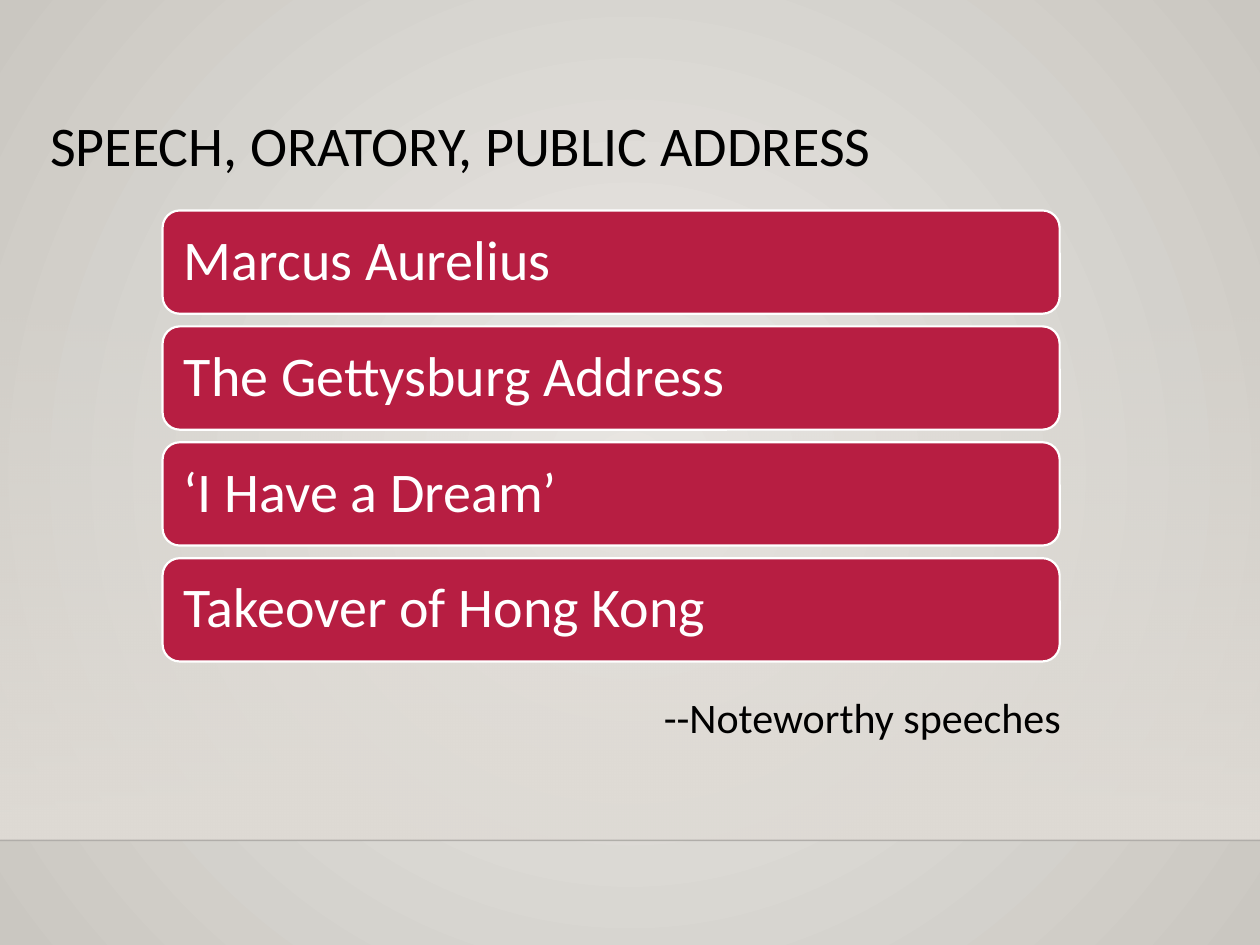
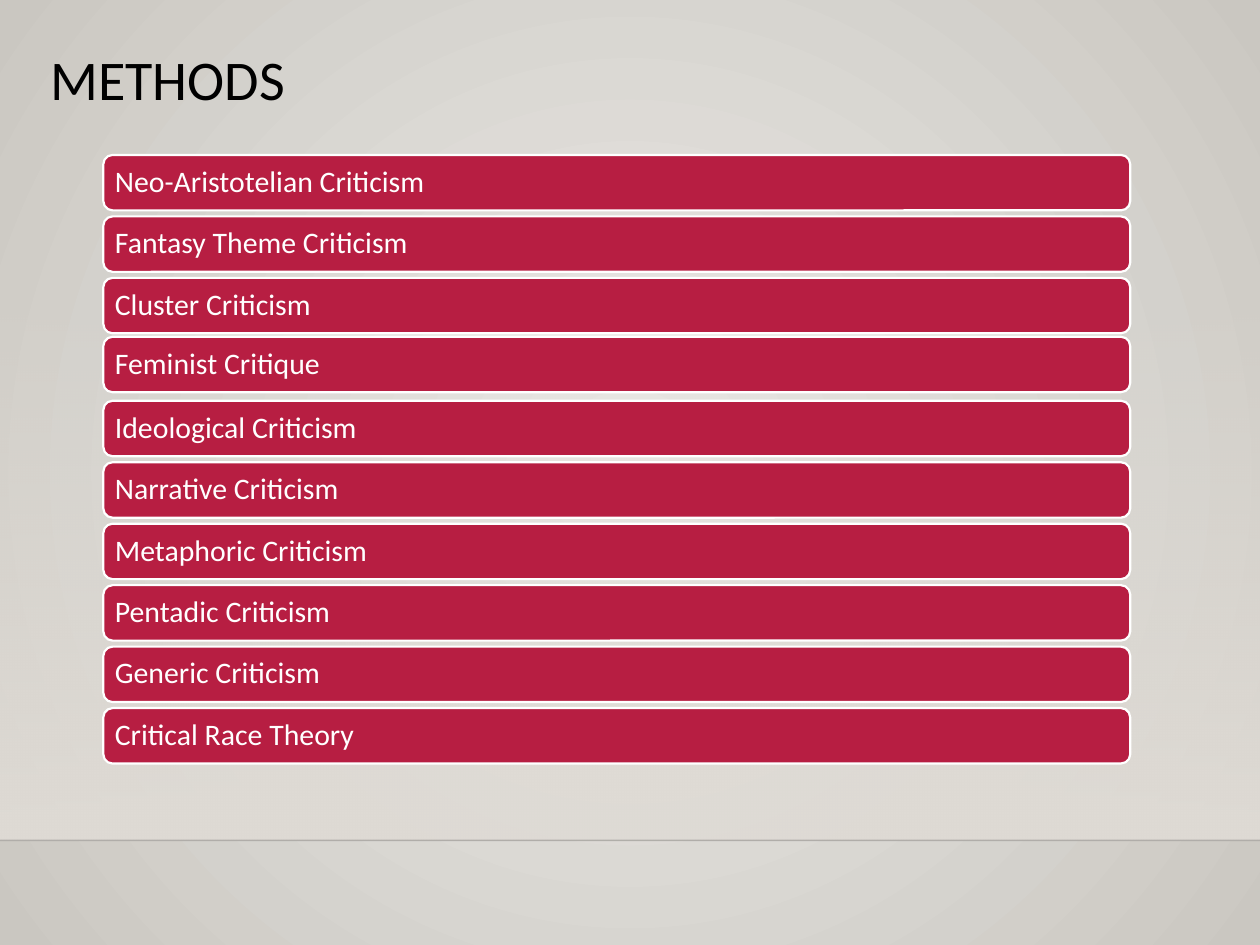
from dataclasses import dataclass

from lxml import etree
from pptx import Presentation
from pptx.dml.color import RGBColor
from pptx.enum.shapes import MSO_CONNECTOR, MSO_SHAPE
from pptx.enum.text import MSO_ANCHOR, PP_ALIGN
from pptx.oxml.ns import qn
from pptx.util import Inches, Pt

ROUNDED = MSO_SHAPE.ROUNDED_RECTANGLE
RECTANGLE = MSO_SHAPE.RECTANGLE
STRAIGHT = MSO_CONNECTOR.STRAIGHT
TOP, MIDDLE, BOTTOM = MSO_ANCHOR.TOP, MSO_ANCHOR.MIDDLE, MSO_ANCHOR.BOTTOM
LEFT = PP_ALIGN.LEFT
BLANK_LAYOUT = 6
WIDTH, HEIGHT = 10, 7.5
FLOOR = 6.67


@dataclass(frozen=True)
class Theme:
    font: str = "Calibri"
    ink: str = "000000"
    paper: str = "FFFFFF"
    bar: str = "B71E42"
    glow: str = "ECEAE7"
    edge: str = "CAC7C1"
    wall: str = "DFDBD5"
    floor_line: str = "000001"
    title_size: float = 32
    large_size: float = 32
    caption_size: float = 24
    small_size: float = 17


def rgb(value):
    return RGBColor.from_string(value)


def set_alpha(color_element, percent):
    etree.SubElement(color_element, qn("a:alpha"), val=str(percent * 1000))


def set_gradient(fill, first, last):
    fill.gradient()
    for stop, color, position in zip(fill.gradient_stops, (first, last), (0, 1)):
        stop.color.rgb = rgb(color)
        stop.position = position


def write(shape, text, *, font, size, color, anchor=TOP, spacing=0.9, inset=None):
    frame = shape.text_frame
    frame.word_wrap = True
    frame.vertical_anchor = anchor
    if inset is not None:
        frame.margin_left = frame.margin_right = Inches(inset)
        frame.margin_top = frame.margin_bottom = Inches(inset)
    para = frame.paragraphs[0]
    para.alignment = LEFT
    para.line_spacing = spacing
    span = para.add_run()
    span.text = text
    span.font.name = font
    span.font.size = Pt(size)
    span.font.color.rgb = rgb(color)


class DeckBuilder:
    def __init__(self, theme):
        self.theme = theme
        self.deck = Presentation()
        self.deck.slide_width = Inches(WIDTH)
        self.deck.slide_height = Inches(HEIGHT)
        self.page = None

    def new_page(self, title, title_top):
        self.page = self.deck.slides.add_slide(self.deck.slide_layouts[BLANK_LAYOUT])
        self.background()
        self.wall()
        self.floor_line()
        self.text(title, 0.3, title_top, 8.37, 1.25,
                  size=self.theme.title_size, anchor=BOTTOM)

    def background(self):
        set_gradient(self.page.background.fill, self.theme.glow, self.theme.edge)
        gradient = self.page.element.find(".//" + qn("a:gradFill"))
        gradient.remove(gradient.find(qn("a:lin")))
        circle = etree.SubElement(gradient, qn("a:path"), path="circle")
        etree.SubElement(circle, qn("a:fillToRect"),
                         l="50000", t="50000", r="50000", b="50000")

    def wall(self):
        wall = self.shape(RECTANGLE, 0, 2.2, WIDTH, FLOOR - 2.2)
        set_gradient(wall.fill, self.theme.wall, self.theme.wall)
        wall.fill.gradient_angle = 270
        set_alpha(wall.element.find(".//" + qn("a:srgbClr")), 0)
        wall.line.fill.background()

    def floor_line(self):
        line = self.page.shapes.add_connector(
            STRAIGHT, Inches(0), Inches(FLOOR), Inches(WIDTH), Inches(FLOOR))
        line.line.width = Pt(1)
        line.line.color.rgb = rgb(self.theme.floor_line)
        set_alpha(line.element.find(".//" + qn("a:srgbClr")), 20)
        etree.SubElement(line.element.spPr, qn("a:effectLst"))

    def shape(self, kind, left, top, width, height):
        shape = self.page.shapes.add_shape(
            kind, Inches(left), Inches(top), Inches(width), Inches(height))
        shape.shadow.inherit = False
        return shape

    def text(self, text, left, top, width, height, **style):
        box = self.page.shapes.add_textbox(
            Inches(left), Inches(top), Inches(width), Inches(height))
        write(box, text, font=self.theme.font, color=self.theme.ink, **style)

    def bar(self, text, left, top, width, height, *, size, inset):
        bar = self.shape(ROUNDED, left, top, width, height)
        bar.fill.solid()
        bar.fill.fore_color.rgb = rgb(self.theme.bar)
        bar.line.color.rgb = rgb(self.theme.paper)
        bar.line.width = Pt(1.25)
        write(bar, text, font=self.theme.font, size=size, color=self.theme.paper,
              anchor=MIDDLE, inset=inset)

    def bar_list(self, labels, left, first_top, last_top, width, height, *,
                 raised=None, **style):
        """Stack bars evenly; raised maps a label to its upward offset."""
        pitch = (last_top - first_top) / (len(labels) - 1)
        for index, label in enumerate(labels):
            top = first_top + index * pitch - (raised or {}).get(label, 0)
            self.bar(label, left, top, width, height, **style)


def main():
    theme = Theme()
    builder = DeckBuilder(theme)

    # Noteworthy speeches
    builder.new_page("SPEECH, ORATORY, PUBLIC ADDRESS", 0.22)
    speeches = ["Marcus Aurelius", "The Gettysburg Address",
                "‘I Have a Dream’", "Takeover of Hong Kong"]
    builder.bar_list(speeches, 1.29, 1.67, 4.43, 7.12, 0.82,
                     size=theme.large_size, inset=0.13)
    builder.text("--Noteworthy speeches", 5.17, 5.36, 4.53, 0.62,
                 size=theme.caption_size, spacing=1.2)

    # Methods of criticism
    builder.new_page("METHODS", -0.31)
    methods = ["Neo-Aristotelian Criticism", "Fantasy Theme Criticism",
               "Cluster Criticism", "Feminist Critique", "Ideological Criticism",
               "Narrative Criticism", "Metaphoric Criticism", "Pentadic Criticism",
               "Generic Criticism", "Critical Race Theory"]
    builder.bar_list(methods, 0.82, 1.23, 5.62, 8.15, 0.44,
                     raised={"Feminist Critique": 0.02},
                     size=theme.small_size, inset=0.07)

    builder.deck.save("out.pptx")


if __name__ == "__main__":
    main()
